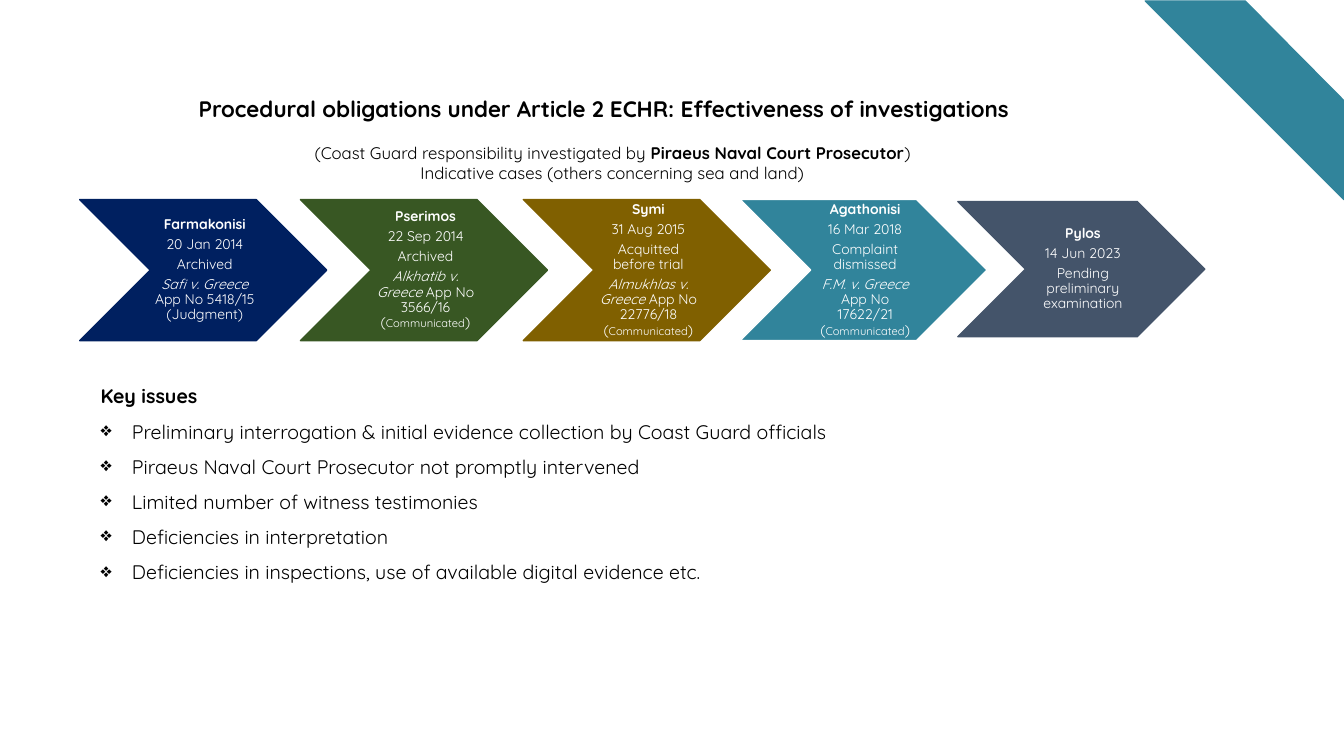
from lxml.etree import SubElement
from pptx import Presentation
from pptx.dml.color import RGBColor
from pptx.enum.shapes import MSO_SHAPE
from pptx.enum.text import MSO_ANCHOR, PP_ALIGN
from pptx.oxml.ns import qn
from pptx.util import Inches, Pt

BLACK = RGBColor(0x00, 0x00, 0x00)
WHITE = RGBColor(0xFF, 0xFF, 0xFF)
NAVY = RGBColor(0x00, 0x20, 0x60)
GREEN = RGBColor(0x38, 0x57, 0x23)
BROWN = RGBColor(0x80, 0x60, 0x00)
TEAL = RGBColor(0x31, 0x84, 0x9B)
SLATE = RGBColor(0x44, 0x54, 0x6A)

BOLD = {"bold": True}
ITALIC = {"italic": True}
SMALL = {"size": Pt(8)}
CENTERED = {"alignment": PP_ALIGN.CENTER}
CASE_LINE = {**CENTERED, "line_spacing": 0.9, "space_after": Pt(3.5)}
ISSUE_LINE = {"alignment": PP_ALIGN.JUSTIFY, "line_spacing": 0.9, "space_before": Pt(10)}
CASE_FRAME = {
    "vertical_anchor": MSO_ANCHOR.MIDDLE,
    "margin_left": Inches(0.04),
    "margin_right": Inches(0.01),
    "margin_top": Inches(0.01),
    "margin_bottom": Inches(0.01),
}
CHEVRON_WIDTH = 2.45


def apply(target, values):
    for name, value in values.items():
        setattr(target, name, value)


def application(case_name, number):
    """Runs for a communicated application to the court."""
    return [(f"{case_name} ", ITALIC), (f"App No {number} (", {}),
            ("Communicated", SMALL), (")", {})]


# left, top, height, fill, outline, paragraphs below the place name
CASES = [
    (0.79, 1.98, 1.4, NAVY, NAVY, "Farmakonisi",
     ["20 Jan 2014", "Archived",
      [("Safi v. Greece ", ITALIC), ("App No 5418/15 (Judgment)", {})]]),
    (2.98, 1.98, 1.4, GREEN, GREEN, "Pserimos",
     ["22 Sep 2014", "Archived", application("Alkhatib v. Greece", "3566/16")]),
    (5.19, 1.98, 1.4, BROWN, BROWN, "Symi",
     ["31 Aug 2015", "Acquitted before trial",
      application("Almukhlas v. Greece", "22776/18")]),
    (7.34, 1.98, 1.4, TEAL, WHITE, "Agathonisi",
     ["16 Mar 2018", "Complaint dismissed",
      application("F.M. v. Greece", "17622/21")]),
    (9.5, 2.0, 1.34, SLATE, SLATE, "Pylos",
     ["14 Jun 2023", "Pending preliminary examination"]),
]

KEY_ISSUES = [
    "Preliminary interrogation & initial evidence collection by Coast Guard officials",
    "Piraeus Naval Court Prosecutor not promptly intervened",
    "Limited number of witness testimonies",
    "Deficiencies in interpretation",
    "Deficiencies in inspections, use of available digital evidence etc.",
]


class SlideBuilder:
    font_name = "Quicksand"

    def __init__(self, slide):
        self.slide = slide

    def paint(self, shape, fill, outline):
        shape.shadow.inherit = False
        shape.fill.solid()
        shape.fill.fore_color.rgb = fill
        shape.line.color.rgb = outline
        shape.line.width = Pt(1)

    def chevron(self, box, fill, outline):
        shape = self.slide.shapes.add_shape(MSO_SHAPE.CHEVRON, *map(Inches, box))
        self.paint(shape, fill, outline)

    def polygon(self, points, fill):
        start, *rest = [(Inches(x), Inches(y)) for x, y in points]
        outline = self.slide.shapes.build_freeform(*start)
        outline.add_line_segments(rest, close=True)
        self.paint(outline.convert_to_shape(), fill, fill)

    def text(self, box, paragraphs, size, color, line_format, frame_format):
        """Add a text box; a paragraph is a string or a list of (text, font format)."""
        frame = self.slide.shapes.add_textbox(*map(Inches, box)).text_frame
        apply(frame, {"word_wrap": True, **frame_format})
        for index, runs in enumerate(paragraphs):
            paragraph = frame.add_paragraph() if index else frame.paragraphs[0]
            apply(paragraph, line_format)
            for words, font_format in [(runs, {})] if isinstance(runs, str) else runs:
                run = paragraph.add_run()
                run.text = words
                apply(run.font, {"name": self.font_name, "size": Pt(size), **font_format})
                run.font.color.rgb = color
        return frame

    def bullet(self, paragraph, indent=0.31):
        properties = paragraph._p.get_or_add_pPr()
        properties.set("marL", str(Inches(indent)))
        properties.set("indent", str(-Inches(indent)))
        SubElement(properties, qn("a:buChar"), char="❖")


def main():
    presentation = Presentation()
    presentation.slide_width = Inches(13.33)
    presentation.slide_height = Inches(7.5)
    builder = SlideBuilder(presentation.slides.add_slide(presentation.slide_layouts[6]))

    for left, top, height, fill, outline, place, details in CASES:
        builder.chevron((left, top, CHEVRON_WIDTH, height), fill, outline)
        # The text sits between the notch and the start of the point.
        inner_box = (left + height / 2, top, CHEVRON_WIDTH - height, height)
        builder.text(inner_box, [[(place, BOLD)], *details], 10, WHITE, CASE_LINE, CASE_FRAME)

    issues = builder.text((0.9, 3.79, 10.62, 3.19), [[("Key issues", BOLD)], *KEY_ISSUES],
                          14, BLACK, ISSUE_LINE, {})
    for issue in issues.paragraphs[1:]:
        builder.bullet(issue)

    builder.polygon([(11.36, 0.01), (12.35, 0.01), (13.33, 1), (13.33, 1.98)], TEAL)

    title = "Procedural obligations under Article 2 ECHR: Effectiveness of investigations"
    builder.text((1.58, 0.88, 8.82, 0.38), [[(title, BOLD)]], 16, BLACK,
                 {**CENTERED, "line_spacing": 0.9}, {"vertical_anchor": MSO_ANCHOR.BOTTOM})

    subtitle = [
        [("(Coast Guard responsibility investigated by ", {}),
         ("Piraeus Naval Court Prosecutor", BOLD), (")", {})],
        "Indicative cases (others concerning sea and land)",
    ]
    builder.text((2.19, 1.37, 7.77, 0.5), subtitle, 12, BLACK, CENTERED, {})

    presentation.save("out.pptx")


if __name__ == "__main__":
    main()
